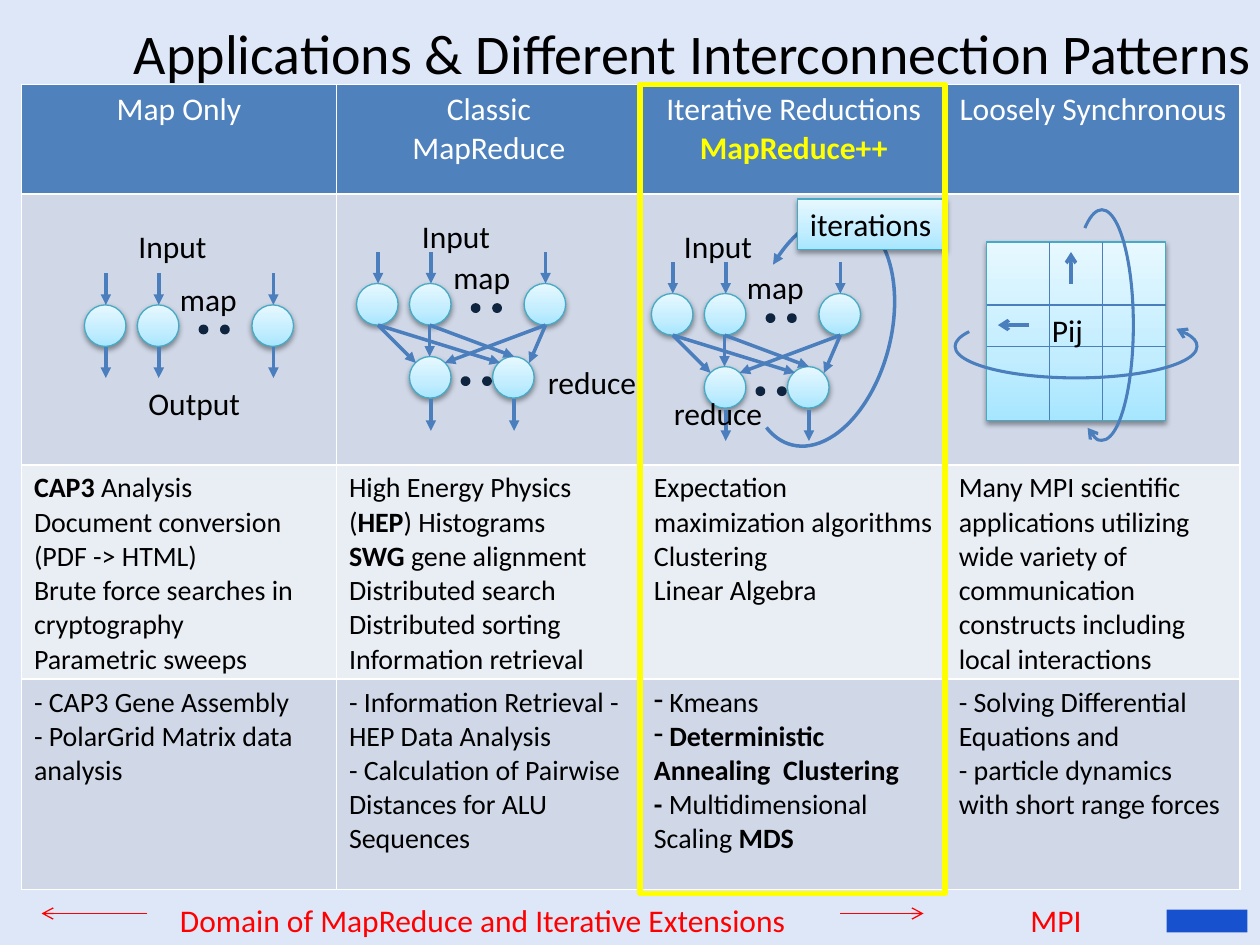
from lxml import etree
from pptx import Presentation
from pptx import util as u
from pptx.dml.color import RGBColor
from pptx.enum import shapes, text
from pptx.oxml import ns, parse_xml

COLORS = {
    "background": "DEE7F8", "ink": "000000", "white": "FFFFFF", "yellow": "FFFF00",
    "red": "FF0000", "header": "4F81BD", "band": "D0D8E8", "light_band": "E9EDF4",
    "arrow": "4B7EBC", "node_edge": "46AAC5", "dot": "0F243E", "mark": "1851CE",
}
GLASS = [(0, "A7E6FF"), (35, "C1EDFF"), (100, "E7F8FF")]
SHAPE = shapes.MSO_SHAPE
CENTER, LEFT = text.PP_ALIGN.CENTER, text.PP_ALIGN.LEFT

# Asterisks enclose bold text; a leading space calls for a dash bullet.
HEADINGS = [["Map Only"], ["Classic", "MapReduce"],
            ["Iterative Reductions *MapReduce++*"], ["Loosely Synchronous"]]
USES = [
    ["*CAP3* Analysis", "Document conversion (PDF -> HTML)",
     "Brute force searches in cryptography", "Parametric sweeps"],
    ["High Energy Physics (*HEP*) Histograms", "*SWG* gene alignment",
     "Distributed search", "Distributed sorting", "Information retrieval"],
    ["Expectation maximization algorithms", "Clustering", "Linear Algebra"],
    ["Many MPI scientific applications utilizing wide variety of "
     "communication constructs including local interactions"],
]
EXAMPLES = [
    ["- CAP3 Gene Assembly\v- PolarGrid Matrix data analysis"],
    ["- Information Retrieval - HEP Data Analysis",
     "- Calculation of Pairwise Distances for ALU Sequences"],
    [" Kmeans", " *Deterministic Annealing  Clustering*",
     "*- *Multidimensional Scaling *MDS*"],
    ["- Solving Differential Equations and",
     "- particle dynamics with short range forces"],
]


def rgb(name):
    return RGBColor.from_string(COLORS[name])


def inches(*lengths):
    return [u.Inches(length) for length in lengths]


class Painter:
    font = "Calibri"

    def __init__(self, slide):
        self.slide = slide
        self.layer = slide.shapes
        slide.background.fill.solid()
        slide.background.fill.fore_color.rgb = rgb("background")

    def start_group(self):
        self.layer = self.slide.shapes.add_group_shape().shapes

    def end_group(self):
        self.layer = self.slide.shapes

    def fill_text(self, frame, lines, size=18, color="ink", accent=None, align=LEFT):
        for i, line in enumerate(lines):
            paragraph = frame.paragraphs[0] if i == 0 else frame.add_paragraph()
            paragraph.alignment = align
            if line.startswith(" "):
                props = paragraph._p.get_or_add_pPr()
                props.set("marL", "0")
                props.set("indent", "0")
                etree.SubElement(props, ns.qn("a:buChar")).set("char", "-")
            for j, part in enumerate(line.split("*")):
                if not part:
                    continue
                known = len(paragraph.runs)
                if known:
                    paragraph.add_run().text = part
                else:
                    paragraph.text = part
                bold = j % 2 == 1
                for run in paragraph.runs[known:]:
                    run.font.name = self.font
                    run.font.size = u.Pt(size)
                    run.font.bold = bold
                    run.font.color.rgb = rgb(accent if bold and accent else color)

    def label(self, words, left, top, width, height=0.4, size=18, color="ink",
              align=LEFT, wrap=False):
        frame = self.layer.add_textbox(*inches(left, top, width, height)).text_frame
        frame.word_wrap = wrap
        frame.vertical_anchor = text.MSO_ANCHOR.MIDDLE if wrap else text.MSO_ANCHOR.TOP
        if not wrap:
            frame.auto_size = text.MSO_AUTO_SIZE.SHAPE_TO_FIT_TEXT
        self.fill_text(frame, [words], size, color, align=align)

    def shape(self, kind, left, top, width, height, fill=None, line=None, weight=1.0):
        item = self.layer.add_shape(kind, *inches(left, top, width, height))
        item.shadow.inherit = False
        if fill:
            item.fill.solid()
            item.fill.fore_color.rgb = rgb(fill)
        else:
            item.fill.background()
        if line:
            item.line.color.rgb = rgb(line)
            item.line.width = u.Pt(weight)
        else:
            item.line.fill.background()
        return item

    def glass(self, kind, left, top, width, height):
        """Pale blue gradient shape with a soft shadow."""
        item = self.shape(kind, left, top, width, height, line="node_edge", weight=0.75)
        stops = "".join(f'<a:gs pos="{pos * 1000}"><a:srgbClr val="{color}"/></a:gs>'
                        for pos, color in GLASS)
        props = item._element.spPr
        props.replace(props.find(ns.qn("a:noFill")), parse_xml(
            f'<a:gradFill {ns.nsdecls("a")}><a:gsLst>{stops}</a:gsLst>'
            '<a:lin ang="16200000" scaled="0"/></a:gradFill>'))
        props.find(ns.qn("a:effectLst")).append(parse_xml(
            f'<a:outerShdw {ns.nsdecls("a")} blurRad="{u.Pt(3.1)}" dist="{u.Pt(1.6)}" '
            'dir="5400000" rotWithShape="0"><a:srgbClr val="000000">'
            '<a:alpha val="38000"/></a:srgbClr></a:outerShdw>'))
        return item

    def tip(self, item, end, kind):
        etree.SubElement(item.line._get_or_add_ln(), ns.qn(f"a:{end}")).set("type", kind)

    def line(self, x1, y1, x2, y2, color="arrow", weight=2.0, tip="triangle"):
        item = self.layer.add_connector(shapes.MSO_CONNECTOR.STRAIGHT,
                                        *inches(x1, y1, x2, y2))
        item.line.color.rgb = rgb(color)
        item.line.width = u.Pt(weight)
        etree.SubElement(item._element.spPr, ns.qn("a:effectLst"))
        if tip:
            self.tip(item, "tailEnd", tip)

    def arc(self, box, angles, end, tip, weight, rotation=0, flip=False):
        item = self.shape(SHAPE.ARC, *box, line="arrow", weight=weight)
        item.adjustments[0], item.adjustments[1] = angles
        item.rotation = rotation
        if flip:
            item._element.spPr.xfrm.set("flipV", "1")
        self.tip(item, end, tip)

    def dots(self, left, top):
        for x in (left, left + 0.17):
            self.shape(SHAPE.OVAL, x, top, 0.05, 0.05, "dot", "dot", 2)

    def mappers(self, left, top, outputs=False):
        for x in (left, left + 0.42, left + 1.33):
            self.glass(SHAPE.OVAL, x, top, 0.33, 0.33)
            self.line(x + 0.17, top - 0.25, x + 0.17, top)
            if outputs:
                self.line(x + 0.17, top + 0.33, x + 0.17, top + 0.58)
        self.dots(left + 0.92, top + 0.17)

    def map_reduce(self, left, top):
        self.mappers(left, top)
        for x in (left + 0.42, left + 1.08):
            self.glass(SHAPE.OVAL, x, top + 0.58, 0.33, 0.33)
            self.line(x + 0.17, top + 0.92, x + 0.17, top + 1.17)
        for start, end, drop in [(0.17, 0.47, 0.63), (0.58, 0.58, 0.58), (1.5, 0.7, 0.63),
                                 (0.17, 1.14, 0.63), (0.58, 1.25, 0.58), (1.5, 1.37, 0.63)]:
            self.line(left + start, top + 0.33, left + end, top + drop)
        self.dots(left + 0.84, top + 0.75)

    def table(self, left, top, widths, heights, rows):
        grid = self.layer.add_table(len(heights), len(widths), *inches(
            left, top, sum(widths), sum(heights))).table
        for column, width in zip(grid.columns, widths):
            column.width = u.Inches(width)
        for row, height, (fill, size, color, align, contents) in zip(
                grid.rows, heights, rows):
            row.height = u.Inches(height)
            for cell, lines in zip(row.cells, contents):
                cell.fill.solid()
                cell.fill.fore_color.rgb = rgb(fill)
                self.fill_text(cell.text_frame, lines, size, color, "yellow"
                               if fill == "header" else None, align)


def main():
    deck = Presentation()
    deck.slide_width, deck.slide_height = inches(10, 7.5)
    p = Painter(deck.slides.add_slide(deck.slide_layouts[6]))

    # Group mark, title and comparison table
    p.shape(SHAPE.RECTANGLE, 9.26, 7.22, 0.64, 0.18, fill="mark")
    p.label("Applications & Different Interconnection Patterns", 0.75, 0, 9.5, 0.83,
            size=32, align=CENTER, wrap=True)
    p.table(0.17, 0.67, [2.5, 2.42, 2.42, 2.33], [0.87, 2.15, 1.6, 1.67], [
        ("header", 18, "white", CENTER, HEADINGS),
        ("band", 18, "ink", LEFT, [[]] * 4),
        ("light_band", 16, "ink", LEFT, USES),
        ("band", 16, "ink", LEFT, EXAMPLES),
    ])

    # Map only
    p.start_group()
    p.mappers(0.67, 2.42, outputs=True)
    p.label("Input", 1, 1.75, 0.75)
    p.label("map", 1.33, 2.17, 0.66)
    p.label("Output", 1.08, 3, 0.94)

    # Classic MapReduce
    p.start_group()
    p.map_reduce(2.83, 2.25)
    p.label("Input", 3.25, 1.67, 0.75)
    p.label("map", 3.5, 2, 0.66)
    p.label("reduce", 4.25, 2.83, 0.91)

    # Iterative reductions
    p.end_group()
    p.arc((5.96, 1.69, 1.11, 1.87), (131.85, 63.04), "headEnd", "triangle", 2, 14.3)
    p.start_group()
    p.map_reduce(5.17, 2.33)
    p.label("Input", 5.33, 1.75, 0.75)
    p.label("map", 5.83, 2.08, 0.66)
    p.label("reduce", 5.25, 3.08, 0.91)
    iterations = p.glass(SHAPE.RECTANGLE, 6.33, 1.58, 1.18, 0.4).text_frame
    iterations.word_wrap = False
    p.fill_text(iterations, ["iterations"])

    # Loosely synchronous
    p.start_group()
    p.glass(SHAPE.RECTANGLE, 7.83, 1.92, 1.42, 1.42)
    for x in (8.33, 8.75):
        p.line(x, 1.92, x, 3.33, weight=0.75, tip=None)
    for y in (2.42, 2.75):
        p.line(7.83, y, 9.25, y, weight=0.75, tip=None)
    p.label("Pij", 8.25, 2.42, 0.45)
    p.line(8.5, 2.25, 8.5, 2, tip="arrow")
    p.line(8.17, 2.58, 7.92, 2.58, tip="arrow")
    ring = (103.27, 5.98)
    p.arc((7.58, 2.5, 1.92, 0.5), ring, "tailEnd", "arrow", 1.75, flip=True)
    p.arc((7.83, 2.33, 1.83, 0.5), ring, "headEnd", "arrow", 1.75, 270, flip=True)
    p.end_group()

    # Domain captions and highlighted column
    p.label("Domain of MapReduce and Iterative Extensions", 1.33, 7.1, 5.07, color="red")
    for start, end in ((6.67, 7.33), (1.17, 0.33)):
        p.line(start, 7.25, end, 7.25, "red", 0.75, "arrow")
    p.label("MPI", 8.08, 7.1, 0.61, color="red")
    p.shape(SHAPE.RECTANGLE, 5.08, 0.67, 2.42, 6.42, line="yellow", weight=3)

    deck.save("out.pptx")


if __name__ == "__main__":
    main()
